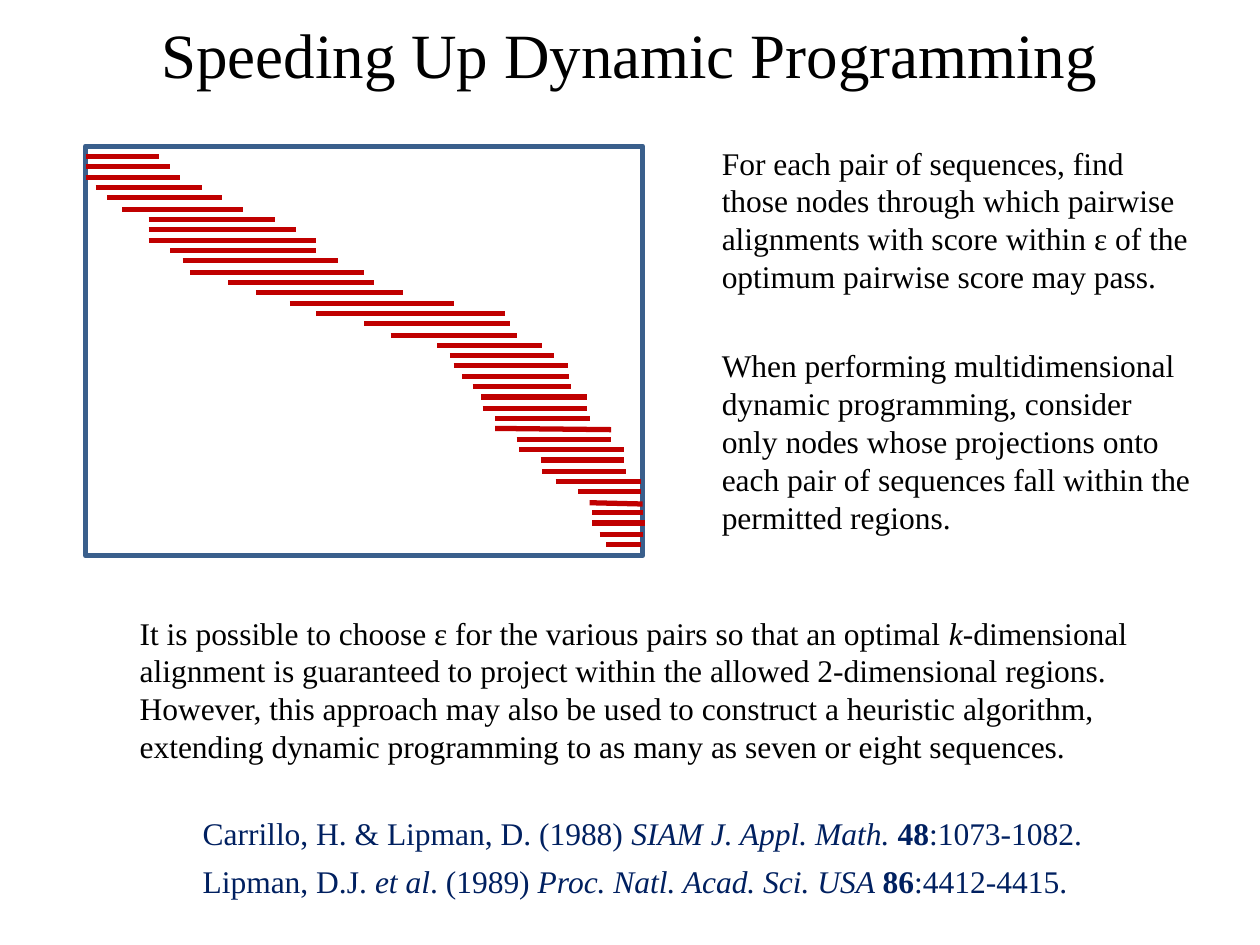
from lxml import etree
from pptx import Presentation
from pptx.dml.color import RGBColor
from pptx.enum.shapes import MSO_CONNECTOR, MSO_SHAPE
from pptx.enum.text import MSO_ANCHOR, MSO_AUTO_SIZE, PP_ALIGN
from pptx.oxml.ns import qn
from pptx.util import Pt

STRAIGHT = MSO_CONNECTOR.STRAIGHT
RECTANGLE = MSO_SHAPE.RECTANGLE
MIDDLE = MSO_ANCHOR.MIDDLE
NO_AUTOFIT, FIT_SHAPE = MSO_AUTO_SIZE.NONE, MSO_AUTO_SIZE.SHAPE_TO_FIT_TEXT
CENTER, LEFT = PP_ALIGN.CENTER, PP_ALIGN.LEFT

PX = 9144  # 100 px to the inch
FONT = "Times New Roman"
COLORS = {"text": "000000", "citation": "002060", "frame": "3A5F8C", "band": "C00000"}


def color(name):
    return RGBColor.from_string(COLORS[name])


def write_runs(paragraph, pieces, size, color_name, alignment=LEFT):
    """Each piece is (text, style), where style is "", "italic" or "bold"."""
    paragraph.alignment = alignment
    for text, style in pieces:
        run = paragraph.add_run()
        run.text = text
        run.font.name = FONT
        run.font.size = Pt(size)
        run.font.color.rgb = color(color_name)
        run.font.italic = style == "italic"
        run.font.bold = style == "bold"


presentation = Presentation()
presentation.slide_width, presentation.slide_height = 1000 * PX, 750 * PX
slide = presentation.slides.add_slide(presentation.slide_layouts[5])

# Title
title = slide.shapes.title
title.left, title.top, title.width, title.height = 62 * PX, 5 * PX, 875 * PX, 75 * PX
title.text_frame.auto_size = NO_AUTOFIT
title.text_frame.vertical_anchor = MIDDLE
write_runs(title.text_frame.paragraphs[0],
           [("Speeding Up Dynamic Programming", "")], 36, "text", CENTER)

# Alignment matrix: frame and permitted region, one bar per row
matrix = slide.shapes.add_group_shape()
frame = matrix.shapes.add_shape(RECTANGLE, 68 * PX, 116 * PX, 442 * PX, 325 * PX)
frame.shadow.inherit = False
frame.fill.background()
frame.line.color.rgb = color("frame")
frame.line.width = Pt(3)

FIRST_ROW, LAST_ROW = 124, 432
row_spans = [
    (68, 126), (68, 135), (68, 143), (76, 160), (85, 176), (97, 193), (118, 218),
    (118, 235), (118, 251), (135, 251), (145, 268), (151, 289), (181, 297), (203, 320),
    (230, 360), (251, 401), (289, 405), (310, 410), (347, 430), (357, 440), (360, 451),
    (367, 452), (375, 453), (382, 466), (383, 466), (393, 468), (393, 485), (410, 485),
    (412, 495), (429, 495), (430, 497), (441, 509), (459, 509), (468, 510), (470, 510),
    (470, 512), (476, 510), (481, 509),
]
sloping_rows = (26, 33)  # these end 1 px lower
row_gap = (LAST_ROW - FIRST_ROW) / (len(row_spans) - 1)
for row, (start, end) in enumerate(row_spans):
    y = round(FIRST_ROW + row * row_gap)
    end_y = y + (row in sloping_rows)
    bar = matrix.shapes.add_connector(STRAIGHT, start * PX, y * PX, end * PX, end_y * PX)
    bar.line.color.rgb = color("band")
    bar.line.width = Pt(3)
    etree.SubElement(bar._element.spPr, qn("a:effectLst"))

# Explanations and citations: box, wrap, colour, pieces
text_boxes = [
    ((563, 109, 395, 131), True, "text", [
        ("For each pair of sequences, find those nodes through which pairwise alignments "
         "with score within ε of the optimum pairwise score may pass.", "")]),
    ((563, 270, 395, 162), True, "text", [
        ("When performing multidimensional dynamic programming, consider only nodes whose "
         "projections onto each pair of sequences fall within the permitted regions.", "")]),
    ((101, 482, 853, 131), True, "text", [
        ("It is possible to choose ε for the various pairs so that an optimal ", ""),
        ("k", "italic"),
        ("-dimensional alignment is guaranteed to project within the allowed 2-dimensional "
         "regions. However, this approach may also be used to construct a heuristic "
         "algorithm, extending dynamic programming to as many as seven or eight "
         "sequences.", "")]),
    ((151, 641, 731, 40), False, "citation", [
        ("Carrillo, H. & Lipman, D. (1988) ", ""), ("SIAM J. Appl. Math. ", "italic"),
        ("48", "bold"), (":1073-1082.", "")]),
    ((151, 679, 721, 40), False, "citation", [
        ("Lipman, D.J. ", ""), ("et al", "italic"), (". (1989) ", ""),
        ("Proc. Natl. Acad. Sci. USA ", "italic"), ("86", "bold"), (":4412-4415.", "")]),
]
for box, wrap, color_name, pieces in text_boxes:
    text_frame = slide.shapes.add_textbox(*(length * PX for length in box)).text_frame
    text_frame.word_wrap = wrap
    text_frame.auto_size = FIT_SHAPE
    write_runs(text_frame.paragraphs[0], pieces, 18, color_name)

presentation.save("out.pptx")
